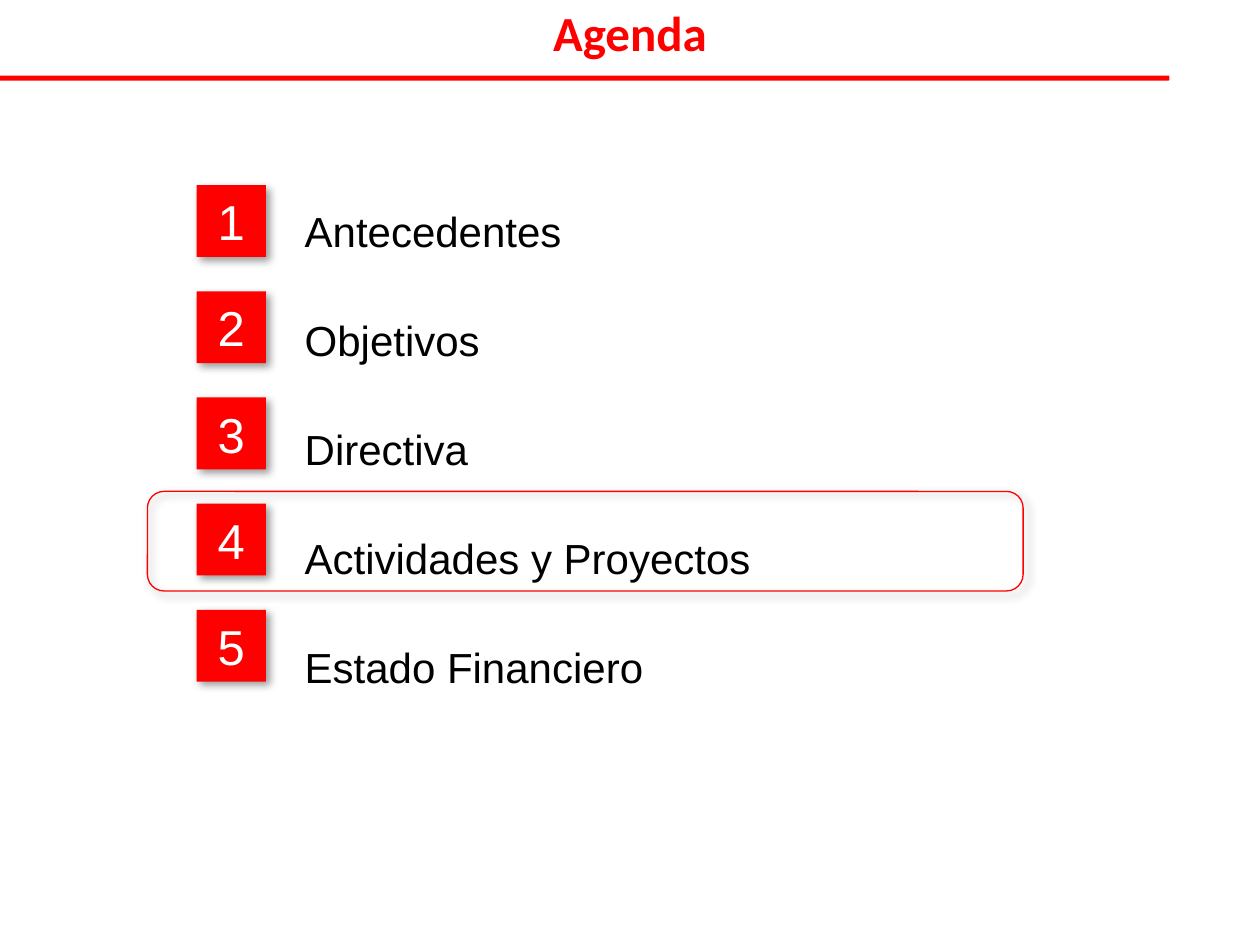
"""Build an agenda slide with numbered topics and the current one outlined."""
from lxml.etree import SubElement
from pptx import Presentation
from pptx.dml.color import RGBColor
from pptx.enum.shapes import MSO_SHAPE as Shape
from pptx.enum.text import MSO_ANCHOR as Anchor, PP_ALIGN as Align
from pptx.oxml.ns import qn
from pptx.util import Inches, Pt

TITLE = "Agenda"
TOPICS = ["Antecedentes", "Objetivos", "Directiva", "Actividades y Proyectos", "Estado Financiero"]
COLORS = {"accent": "FF0000", "text": "000000", "badge_text": "FFFFFF", "shadow": "000000"}
BADGE_LEFT, FIRST_BADGE_TOP, LAST_BADGE_TOP = 1.56, 1.47, 4.84
BADGE_PITCH = (LAST_BADGE_TOP - FIRST_BADGE_TOP) / (len(TOPICS) - 1)
BADGE_SIZE = (0.55, 0.57)
TOPIC_SIZE = 24
TOPIC_GAP = 0.2 * TOPIC_SIZE


def color(name):
    return RGBColor.from_string(COLORS[name])


def style_font(paragraph, name, size, color_name, bold=False):
    font = paragraph.font
    font.name, font.size, font.bold = name, Pt(size), bold
    font.color.rgb = color(color_name)


def add_shadow(shape):
    effects = shape._element.spPr.find(qn("a:effectLst"))
    shadow = SubElement(effects, qn("a:outerShdw"), blurRad=str(Pt(5)), dist=str(Pt(3)),
                        dir=str(45 * 60000), algn="tl", rotWithShape="0")
    tint = SubElement(shadow, qn("a:srgbClr"), val=COLORS["shadow"])
    SubElement(tint, qn("a:alpha"), val="40000")


def add_block(slide, kind, box, filled=True):
    shape = slide.shapes.add_shape(kind, *map(Inches, box))
    shape.shadow.inherit = False
    if filled:
        shape.fill.solid()
        shape.fill.fore_color.rgb = color("accent")
        shape.line.fill.background()
    else:
        shape.fill.background()
        shape.line.color.rgb = color("accent")
        shape.line.width = Pt(0.75)
    return shape


def add_text(slide, box):
    frame = slide.shapes.add_textbox(*map(Inches, box)).text_frame
    frame.word_wrap = True
    return frame


def add_topics(slide):
    frame = add_text(slide, (2.32, 1.18, 6.77, 2.83))
    for index, topic in enumerate(TOPICS):
        paragraph = frame.add_paragraph() if index else frame.paragraphs[0]
        paragraph.text = topic
        paragraph.line_spacing = 2.0
        paragraph.space_before = Pt(TOPIC_GAP if index else 0)
        style_font(paragraph, "Arial", TOPIC_SIZE, "text")


def add_badge(slide, index):
    top = FIRST_BADGE_TOP + index * BADGE_PITCH
    badge = add_block(slide, Shape.RECTANGLE, (BADGE_LEFT, top, *BADGE_SIZE))
    add_shadow(badge)
    frame = badge.text_frame
    frame.vertical_anchor = Anchor.MIDDLE
    paragraph = frame.paragraphs[0]
    paragraph.text = str(index + 1)
    paragraph.alignment = Align.CENTER
    style_font(paragraph, "Arial", 28, "badge_text")


def main():
    presentation = Presentation()
    presentation.slide_width, presentation.slide_height = Inches(10), Inches(7.5)
    slide = presentation.slides.add_slide(presentation.slide_layouts[6])

    add_block(slide, Shape.ROUNDED_RECTANGLE, (-0.01, 0.6, 9.29, 0.04))
    add_topics(slide)
    title = add_text(slide, (0.5, -0.03, 9, 0.56)).paragraphs[0]
    title.text = TITLE
    title.alignment = Align.CENTER
    style_font(title, "Calibri", 28, "accent", bold=True)

    highlight = add_block(slide, Shape.ROUNDED_RECTANGLE, (1.17, 3.9, 6.95, 0.79), filled=False)
    add_shadow(highlight)
    for index in range(len(TOPICS)):
        add_badge(slide, index)
    presentation.save("out.pptx")


if __name__ == "__main__":
    main()
